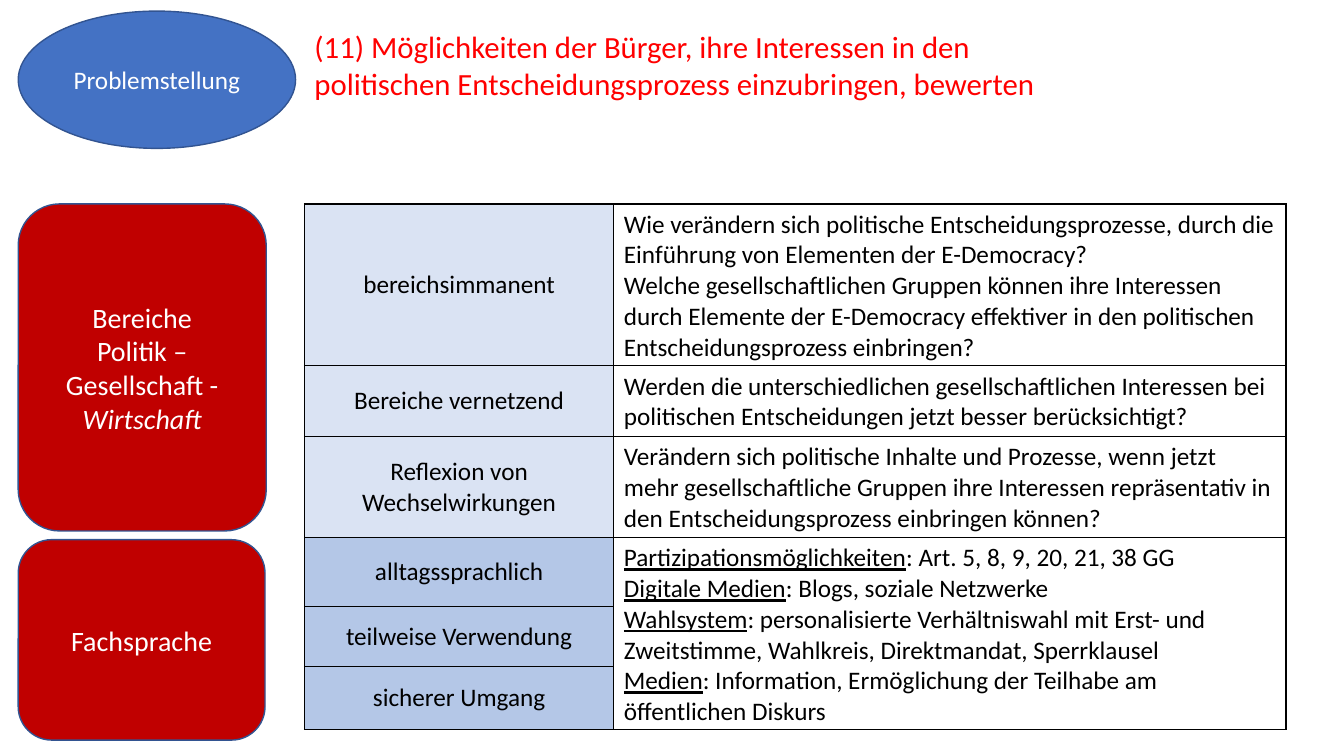
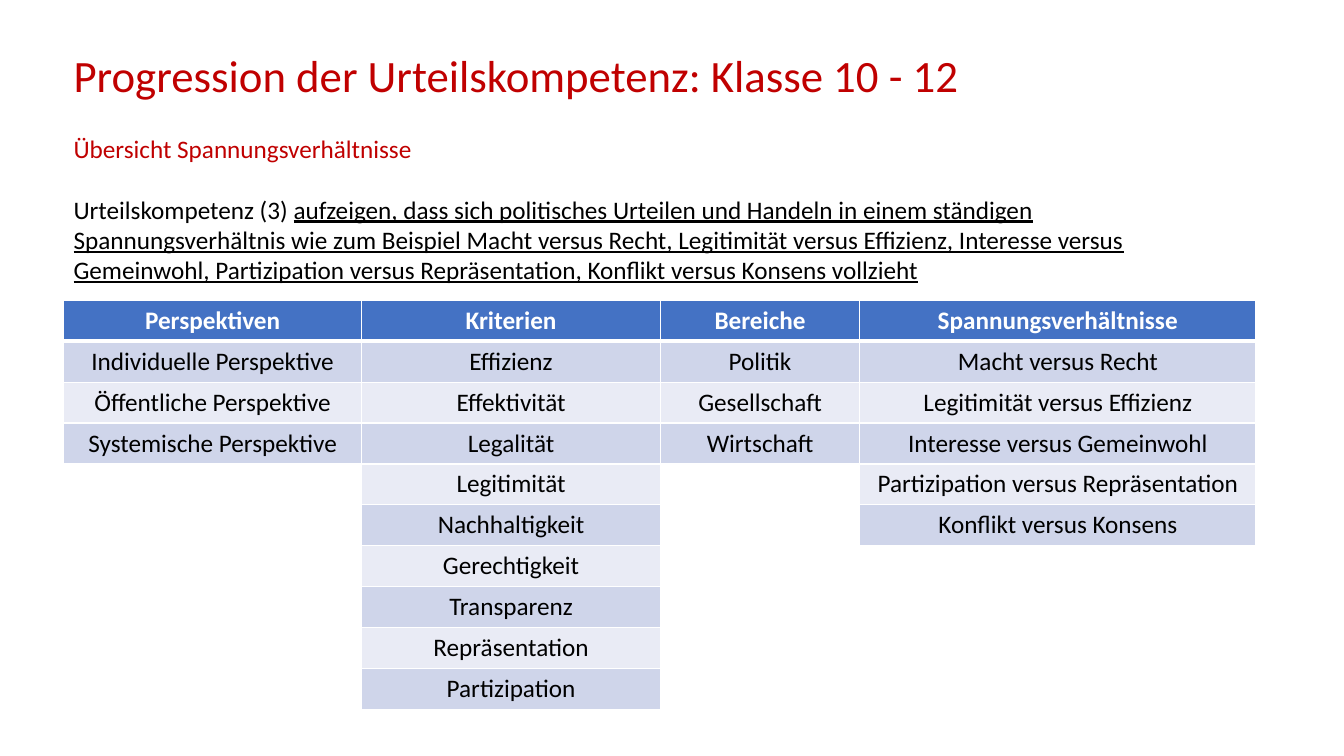
"""Build two slides on judgement skills in civic education."""
from itertools import zip_longest

from lxml.etree import SubElement
from pptx import Presentation
from pptx.dml.color import RGBColor
from pptx.enum.shapes import MSO_SHAPE as Preset
from pptx.enum.text import MSO_ANCHOR as Anchor, MSO_AUTO_SIZE as AutoSize, PP_ALIGN as Align
from pptx.oxml.ns import qn
from pptx.util import Cm, Pt

rgb = RGBColor.from_string
WHITE, BLACK, BRIGHT_RED, RED = "FFFFFF", "000000", "FF0000", "C00000"
BLUE, OUTLINE = "4472C4", "325491"
PALE_BLUE, LIGHT_BLUE = "DAE3F3", "B4C7E7"
BANDS = ["E9EBF5", "CFD5EA"]
UNDERLINED = {"underline": True}
ITALIC = {"italic": True}


def write(frame, paragraphs, size, color, align=Align.LEFT, **style):
    """Fill a text frame; a paragraph is a string or a list of (text, format) runs."""
    for number, content in enumerate(paragraphs):
        paragraph = frame.paragraphs[0] if number == 0 else frame.add_paragraph()
        paragraph.alignment = align
        paragraph.line_spacing = 1.0
        paragraph.space_before = Pt(0)
        for text, extra in [(content, {})] if isinstance(content, str) else content:
            run = paragraph.add_run()
            run.text = text
            run.font.color.rgb = rgb(color)
            formats = {"name": "Calibri", "size": Pt(size), **style, **extra}
            for key, value in formats.items():
                setattr(run.font, key, value)


def format_cell(cell, fill, border, top=1, bottom=1):
    """Give a table cell its fill and border lines, with widths in points."""
    properties = cell._tc.get_or_add_tcPr()
    for side, width in {"lnL": 1, "lnR": 1, "lnT": top, "lnB": bottom}.items():
        line = SubElement(properties, qn(f"a:{side}"), w=str(Pt(width)))
        SubElement(SubElement(line, qn("a:solidFill")), qn("a:srgbClr"), val=border)
    cell.fill.solid()
    cell.fill.fore_color.rgb = rgb(fill)


presentation = Presentation()
presentation.slide_width = Cm(33.87)
presentation.slide_height = Cm(19.05)
title_only = presentation.slide_layouts[5]
title_and_body = presentation.slide_layouts[1]

problem_slide = presentation.slides.add_slide(title_only)
overview_slide = presentation.slides.add_slide(title_and_body)
problem_title = problem_slide.shapes.title
overview_title = overview_slide.shapes.title
overview_body = overview_slide.placeholders[1]

for placeholder, left, top, width, height in [
    (problem_title, 7.67, 0.56, 19.58, 2.13),
    (overview_title, 1.6, 1.07, 30.05, 1.7),
    (overview_body, 1.6, 3.22, 30.05, 4.1),
]:
    position = {"left": left, "top": top, "width": width, "height": height}
    for key, value in position.items():
        setattr(placeholder, key, Cm(value))
    frame_format = {
        "vertical_anchor": Anchor.TOP,
        "word_wrap": True,
        "auto_size": AutoSize.NONE,
    }
    for key, value in frame_format.items():
        setattr(placeholder.text_frame, key, value)

write(
    problem_title.text_frame,
    ["(11) Möglichkeiten der Bürger, ihre Interessen in den politischen "
     "Entscheidungsprozess einzubringen, bewerten"],
    22, BRIGHT_RED,
)

area_text = ["Bereiche", [("Politik – Gesellschaft - ", {}), ("Wirtschaft", ITALIC)]]
for preset, top, width, height, fill, size, label in [
    (Preset.OVAL, 0.28, 6.99, 3.46, BLUE, 18, ["Problemstellung"]),
    (Preset.ROUNDED_RECTANGLE, 5.14, 6.25, 8.24, RED, 20, area_text),
    (Preset.ROUNDED_RECTANGLE, 13.6, 6.22, 5.05, RED, 20, ["Fachsprache"]),
]:
    panel = problem_slide.shapes.add_shape(preset, Cm(0.46), Cm(top), Cm(width), Cm(height))
    panel.shadow.inherit = False
    panel.fill.solid()
    panel.fill.fore_color.rgb = rgb(fill)
    panel.line.color.rgb = rgb(OUTLINE)
    panel.line.width = Pt(1)
    panel.text_frame.vertical_anchor = Anchor.MIDDLE
    write(panel.text_frame, label, size, WHITE, Align.CENTER)

question_rows = [
    ("bereichsimmanent", PALE_BLUE, 4.08, [
        "Wie verändern sich politische Entscheidungsprozesse, durch die "
        "Einführung von Elementen der E-Democracy?",
        "Welche gesellschaftlichen Gruppen können ihre Interessen durch Elemente der "
        "E-Democracy effektiver in den politischen Entscheidungsprozess einbringen?",
    ]),
    ("Bereiche vernetzend", PALE_BLUE, 1.78, [
        "Werden die unterschiedlichen gesellschaftlichen Interessen bei politischen "
        "Entscheidungen jetzt besser berücksichtigt?",
    ]),
    ("Reflexion von Wechselwirkungen", PALE_BLUE, 2.55, [
        "Verändern sich politische Inhalte und Prozesse, wenn jetzt mehr gesellschaftliche "
        "Gruppen ihre Interessen repräsentativ in den Entscheidungsprozess einbringen können?",
    ]),
    ("alltagssprachlich", LIGHT_BLUE, 1.73, [
        [("Partizipationsmöglichkeiten", UNDERLINED), (": Art. 5, 8, 9, 20, 21, 38 GG", {})],
        [("Digitale Medien", UNDERLINED), (": Blogs, soziale Netzwerke", {})],
        [("Wahlsystem", UNDERLINED),
         (": personalisierte Verhältniswahl mit Erst- und Zweitstimme, Wahlkreis, "
          "Direktmandat, Sperrklausel", {})],
        [("Medien", UNDERLINED),
         (": Information, Ermöglichung der Teilhabe am öffentlichen Diskurs", {})],
    ]),
    ("teilweise Verwendung", LIGHT_BLUE, 1.52, []),
    ("sicherer Umgang", LIGHT_BLUE, 1.57, []),
]
questions = problem_slide.shapes.add_table(
    len(question_rows), 2, Cm(7.67), Cm(5.14), Cm(24.74), Cm(13.23)
).table
questions.first_row = questions.horz_banding = False
for column, width in zip(questions.columns, [7.8, 16.94]):
    column.width = Cm(width)
questions.cell(3, 1).merge(questions.cell(5, 1))
for row, (level, fill, height, content) in enumerate(question_rows):
    questions.rows[row].height = Cm(height)
    level_cell, content_cell = questions.cell(row, 0), questions.cell(row, 1)
    format_cell(level_cell, fill, BLACK)
    format_cell(content_cell, WHITE, BLACK)
    level_cell.vertical_anchor = Anchor.MIDDLE
    content_cell.margin_top, content_cell.margin_bottom = Cm(0.13), Cm(0.05)
    write(level_cell.text_frame, [level], 18, BLACK, Align.CENTER)
    write(content_cell.text_frame, content, 18, BLACK)

write(
    overview_title.text_frame,
    ["Progression der Urteilskompetenz: Klasse 10 - 12"],
    32, RED,
)
competence = [
    ("Urteilskompetenz (3) ", {}),
    ("aufzeigen, dass sich politisches Urteilen und Handeln in einem ständigen "
     "Spannungsverhältnis wie zum Beispiel Macht versus Recht, Legitimität versus Effizienz, "
     "Interesse versus Gemeinwohl, Partizipation versus Repräsentation, Konflikt versus "
     "Konsens vollzieht", UNDERLINED),
]
write(overview_body.text_frame, ["Übersicht Spannungsverhältnisse", competence], 18, BLACK)
subtitle, competence_paragraph = overview_body.text_frame.paragraphs
subtitle.runs[0].font.color.rgb = rgb(RED)
competence_paragraph.space_before = Pt(22)
for paragraph in (subtitle, competence_paragraph):
    bullet_properties = paragraph._p.get_or_add_pPr()
    for key in ("marL", "indent"):
        bullet_properties.set(key, "0")
    SubElement(bullet_properties, qn("a:buNone"))

categories = {
    "Perspektiven": [
        "Individuelle Perspektive", "Öffentliche Perspektive", "Systemische Perspektive",
    ],
    "Kriterien": [
        "Effizienz", "Effektivität", "Legalität", "Legitimität", "Nachhaltigkeit",
        "Gerechtigkeit", "Transparenz", "Repräsentation", "Partizipation",
    ],
    "Bereiche": ["Politik", "Gesellschaft", "Wirtschaft"],
    "Spannungsverhältnisse": [
        "Macht versus Recht", "Legitimität versus Effizienz", "Interesse versus Gemeinwohl",
        "Partizipation versus Repräsentation", "Konflikt versus Konsens",
    ],
}
category_rows = [tuple(categories), *zip_longest(*categories.values(), fillvalue="")]
overview = overview_slide.shapes.add_table(
    len(category_rows), len(categories), Cm(1.6), Cm(7.57), Cm(30.05), Cm(10.3)
).table
overview.horz_banding = False
for column, width in zip(overview.columns, [7.52, 7.52, 5.03, 9.98]):
    column.width = Cm(width)
for row, entries in enumerate(category_rows):
    overview.rows[row].height = Cm(1.03)
    header = row == 0
    for column, entry in enumerate(entries):
        cell = overview.cell(row, column)
        fill = BLUE if header else BANDS[row % 2] if entry else WHITE
        format_cell(cell, fill, WHITE, top=3 if row == 1 else 1, bottom=3 if header else 1)
        if entry:
            color = WHITE if header else BLACK
            write(cell.text_frame, [entry], 18, color, Align.CENTER, bold=header)

presentation.save("out.pptx")
